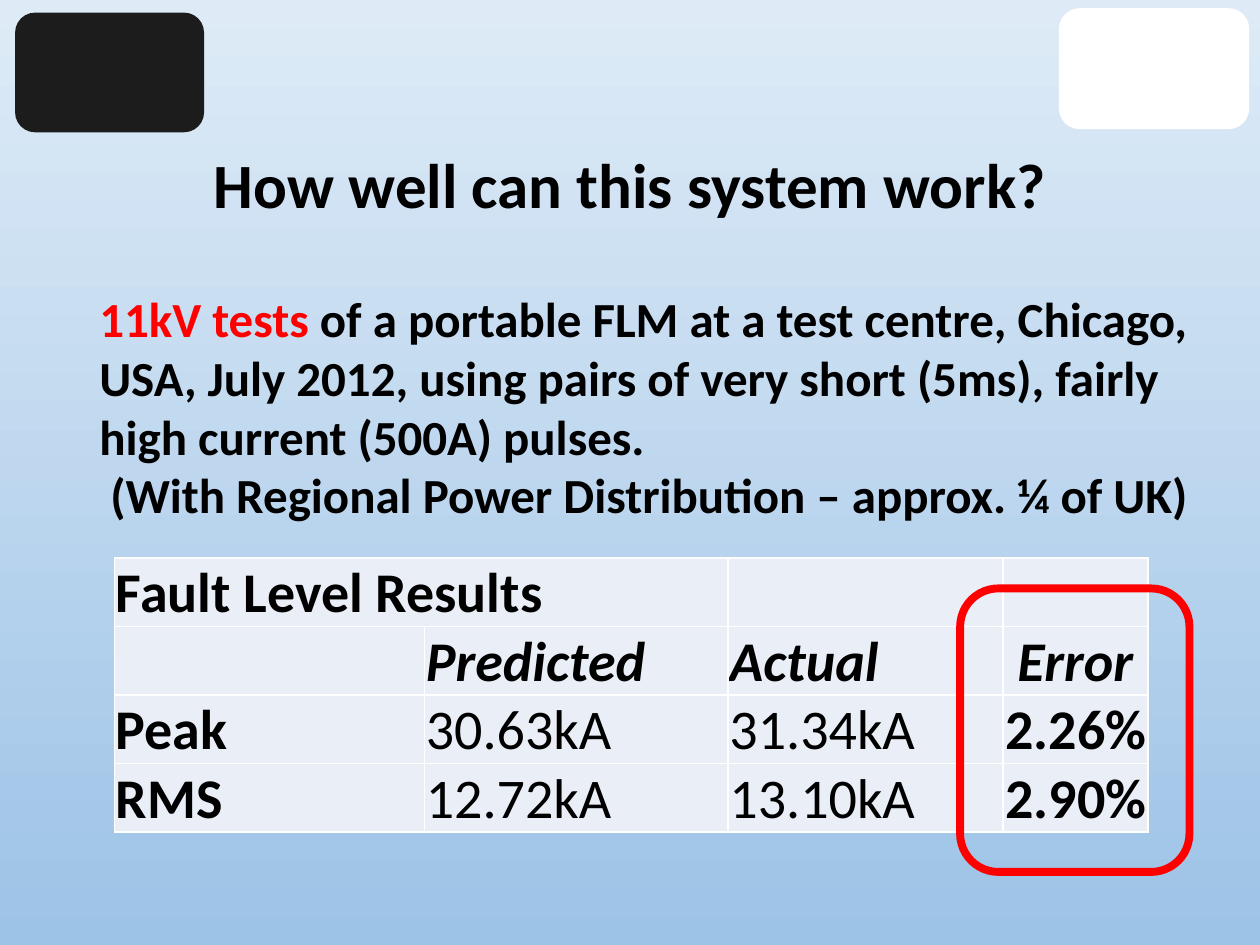
from lxml import etree
from pptx import Presentation
from pptx.dml.color import RGBColor
from pptx.enum.shapes import MSO_SHAPE
from pptx.enum.text import MSO_ANCHOR, MSO_AUTO_SIZE, PP_ALIGN
from pptx.oxml.ns import qn
from pptx.util import Inches, Pt

ROUND_RECT = MSO_SHAPE.ROUNDED_RECTANGLE
BOTTOM = MSO_ANCHOR.BOTTOM
NO_FIT = MSO_AUTO_SIZE.NONE
LEFT, CENTER, RIGHT = PP_ALIGN.LEFT, PP_ALIGN.CENTER, PP_ALIGN.RIGHT

THEME = {
    "font": "Calibri", "title": 36, "body": 28, "cell": 32,
    "text": "000000", "accent": "FF0000", "cell_fill": "EAEFF7",
    "border": "FFFFFF", "background": ("DEEBF7", "9DC3E6"),
    "badge_dark": "1C1C1C", "badge_light": "FFFFFF",
}

TITLE = "How well can this system work?"
BODY = [
    [("11kV tests ", "accent"),
     ("of a portable FLM at a test centre, Chicago, USA, July 2012, using pairs "
      "of very short (5ms), fairly high current (500A) pulses.", "text")],
    [(" (With Regional Power Distribution – approx. ¼ of UK)", "text")],
]
RESULTS = [
    ["Fault Level Results", "", "", ""],
    ["", "Predicted", "Actual", "Error"],
    ["Peak", "30.63kA", "31.34kA", "2.26%"],
    ["RMS", "12.72kA", "13.10kA", "2.90%"],
]
HEADER_ROW, ERROR_COL = 1, 3
COL_WIDTHS = [2.46, 2.41, 2.18, 1.15]
TABLE_BOX = (0.91, 4.43, sum(COL_WIDTHS), 2.17)


def box(values):
    return [Inches(v) for v in values]


def color(key):
    return RGBColor.from_string(THEME[key])


def add_run(p, text, size, color_key="text", bold=True, italic=False):
    r = p.add_run()
    r.text = text
    formats = {"name": THEME["font"], "size": Pt(THEME[size]),
               "bold": bold, "italic": italic}
    for name, value in formats.items():
        setattr(r.font, name, value)
    r.font.color.rgb = color(color_key)


def add_round_rect(s, at, fill=None, line=None, width=0.75):
    sp = s.shapes.add_shape(ROUND_RECT, *box(at))
    sp.shadow.inherit = False
    if fill:
        sp.fill.solid()
        sp.fill.fore_color.rgb = color(fill)
    else:
        sp.fill.background()
    if line:
        sp.line.color.rgb = color(line)
        sp.line.width = Pt(width)
    else:
        sp.line.fill.background()


def set_borders(cell):
    tc_pr = cell._tc.get_or_add_tcPr()
    for i, side in enumerate(("lnL", "lnR", "lnT", "lnB")):
        ln = etree.Element(qn(f"a:{side}"), w=str(Pt(1)))
        fill = etree.SubElement(ln, qn("a:solidFill"))
        etree.SubElement(fill, qn("a:srgbClr"), val=THEME["border"])
        tc_pr.insert(i, ln)


def add_background(s):
    fill = s.background.fill
    fill.gradient()
    fill.gradient_angle = 270
    for i, (stop, rgb) in enumerate(zip(fill.gradient_stops, THEME["background"])):
        stop.position = i
        stop.color.rgb = RGBColor.from_string(rgb)


def add_title(s):
    sp = s.shapes.title
    sp.left, sp.top, sp.width, sp.height = box((1.25, 0.91, 7.5, 0.9))
    tf = sp.text_frame
    tf.auto_size, tf.vertical_anchor = NO_FIT, BOTTOM
    p = tf.paragraphs[0]
    p.alignment, p.line_spacing = CENTER, 0.9
    add_run(p, TITLE, "title")


def add_body(s):
    tf = s.shapes.add_textbox(*box((0.69, 2.24, 9.24, 1.99))).text_frame
    tf.word_wrap = True
    for i, runs in enumerate(BODY):
        p = tf.add_paragraph() if i else tf.paragraphs[0]
        for text, color_key in runs:
            add_run(p, text, "body", color_key)


def add_results(s):
    table = s.shapes.add_table(len(RESULTS), len(COL_WIDTHS), *box(TABLE_BOX)).table
    table.first_row = table.horz_banding = False
    for column, width in zip(table.columns, COL_WIDTHS):
        column.width = Inches(width)
    for row in table.rows:
        row.height = Inches(TABLE_BOX[3] / len(RESULTS))
    margins = {"margin_left": 0.01, "margin_right": 0.01,
               "margin_top": 0.01, "margin_bottom": 0}
    for i, texts in enumerate(RESULTS):
        for j, text in enumerate(texts):
            cell = table.cell(i, j)
            cell.fill.solid()
            cell.fill.fore_color.rgb = color("cell_fill")
            cell.vertical_anchor = BOTTOM
            for name, value in margins.items():
                setattr(cell, name, Inches(value))
            set_borders(cell)
            if not text:
                continue
            is_header = i == HEADER_ROW
            p = cell.text_frame.paragraphs[0]
            if j == ERROR_COL:
                p.alignment = CENTER if is_header else RIGHT
            else:
                p.alignment = LEFT
            add_run(p, text, "cell", bold=is_header or j in (0, ERROR_COL),
                    italic=is_header)
    table.cell(0, 0).merge(table.cell(0, 1))


def main():
    prs = Presentation()
    prs.slide_width, prs.slide_height = Inches(10), Inches(7.5)
    s = prs.slides.add_slide(prs.slide_layouts[5])
    add_background(s)
    add_round_rect(s, (8.41, 0.07, 1.5, 0.95), "badge_light", "badge_light")
    add_round_rect(s, (0.12, 0.1, 1.5, 0.95), "badge_dark")
    add_title(s)
    add_body(s)
    add_results(s)
    add_round_rect(s, (7.62, 4.67, 1.82, 2.25), line="accent", width=4.5)
    prs.save("out.pptx")


if __name__ == "__main__":
    main()
